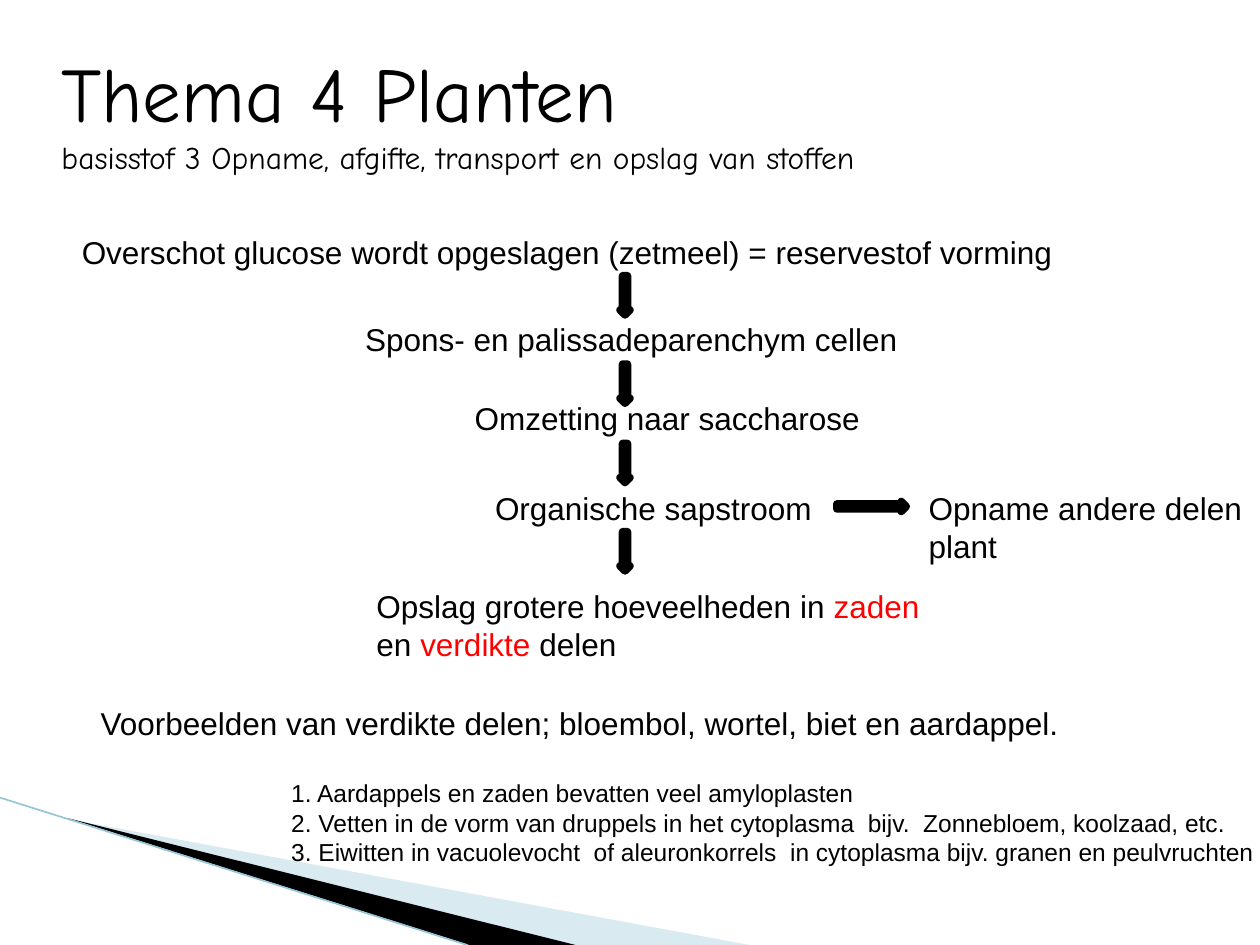
"""Build the slide on uptake and storage of substances in plants."""
from lxml import etree
from pptx import Presentation
from pptx import util as u
from pptx.dml.color import RGBColor
from pptx.enum import shapes, text
from pptx.oxml.ns import qn

Cm, Pt = u.Cm, u.Pt
HUES = {"ink": "000000", "red": "FF0000", "pale": "A0CBDC", "edge": "97C5D8"}
HUES = {name: RGBColor.from_string(code) for name, code in HUES.items()}

deck = Presentation()
deck.slide_width, deck.slide_height = Cm(25.4), Cm(19.05)
page = deck.slides.add_slide(deck.slide_layouts[6]).shapes


def write(spot, lines, wrap=False, face="Arial"):
    box = page.add_textbox(*[Cm(n) for n in spot])
    frame = box.text_frame
    frame.word_wrap = wrap
    for i, line in enumerate(lines):
        para = frame.paragraphs[0] if i == 0 else frame.add_paragraph()
        for part, hue in line:
            run = para.add_run()
            run.text = part
            if hue != "ink":
                run.font.color.rgb = HUES[hue]
        para.font.name, para.font.size = face, Pt(18)
        para.font.color.rgb = HUES["ink"]
    return frame


wedges = [
    ("pale", [(1.4, 16.52), (15.11, 19.05), (11.58, 19.05)]),
    ("ink", [(1.35, 16.49), (11.6, 19.05), (9.46, 19.05)]),
]
for hue, dots in wedges:
    dots = [(Cm(x), Cm(y)) for x, y in dots]
    form = page.build_freeform(*dots[0])
    form.add_line_segments(dots[1:], close=True)
    wedge = form.convert_to_shape()
    wedge.shadow.inherit = False
    wedge.fill.solid()
    wedge.fill.fore_color.rgb = HUES[hue]
    wedge.line.fill.background()
    if hue == "pale":
        tint = wedge.fill._xPr.find(qn("a:solidFill"))[0]
        etree.SubElement(tint, qn("a:alpha")).set("val", "40000")

edge = page.add_connector(shapes.MSO_CONNECTOR.STRAIGHT, Cm(0), Cm(16.08), Cm(9.42), Cm(19.05))
edge.line.color.rgb, edge.line.width = HUES["edge"], Pt(0.95)
etree.SubElement(edge._element.spPr, qn("a:effectLst"))

title = write((0.99, 0.79, 20.04, 2.9), [[("Thema 4 Planten", "ink")]], True, "Comic Neue")
title.vertical_anchor = text.MSO_ANCHOR.MIDDLE
head = title.paragraphs[0]
head.runs[0].font.size = Pt(44)
head.add_line_break()
head.add_run().text = "basisstof 3 Opname, afgifte, transport en opslag van stoffen"

steps = [
    ((1.4, 4.57, 20.27, 1.02), "Overschot glucose wordt opgeslagen (zetmeel) = reservestof vorming"),
    ((7.11, 6.32, 11.35, 1.02), "Spons- en palissadeparenchym cellen"),
    ((9.32, 7.92, 8.53, 1.02), "Omzetting naar saccharose"),
    ((9.73, 9.73, 6.96, 1.02), "Organische sapstroom"),
]
for spot, words in steps:
    write(spot, [[(words, "ink")]])
write((18.47, 9.73, 6.88, 1.8), [[("Opname andere delen", "ink")], [("plant", "ink")]])
write((7.34, 11.71, 11.73, 1.8), [
    [("Opslag grotere hoeveelheden in ", "ink"), ("zaden", "red")],
    [("en ", "ink"), ("verdikte", "red"), (" delen", "ink")],
])

notes = [
    "Voorbeelden van verdikte delen; bloembol, wortel, biet en aardappel.",
    "1. Aardappels en zaden bevatten veel amyloplasten",
    "2. Vetten in de vorm van druppels in het cytoplasma  bijv.  Zonnebloem, koolzaad, etc.",
    "3. Eiwitten in vacuolevocht  of aleuronkorrels  in cytoplasma bijv. granen en peulvruchten",
]
frame = write((1.78, 14.07, 23.83, 3.58), [[(note, "ink")] for note in notes], True)
for para in frame.paragraphs[1:]:
    para.font.size = Pt(14)
    para._p.get_or_add_pPr().set("marL", str(Cm(3.84)))
frame.paragraphs[1].space_before = Pt(20.7)

kinds = shapes.MSO_SHAPE
arrows = [(kinds.DOWN_ARROW, 12.5, top, 0.2, 0.79) for top in (5.56, 7.34, 8.94, 10.72)]
arrows.append((kinds.RIGHT_ARROW, 16.87, 10.11, 1.4, 0.2))
for kind, *spot in arrows:
    arrow = page.add_shape(kind, *[Cm(n) for n in spot])
    arrow.shadow.inherit = False
    arrow.fill.solid()
    arrow.fill.fore_color.rgb = HUES["ink"]
    arrow.line.color.rgb, arrow.line.width = HUES["ink"], Pt(4.33)

deck.save("out.pptx")
